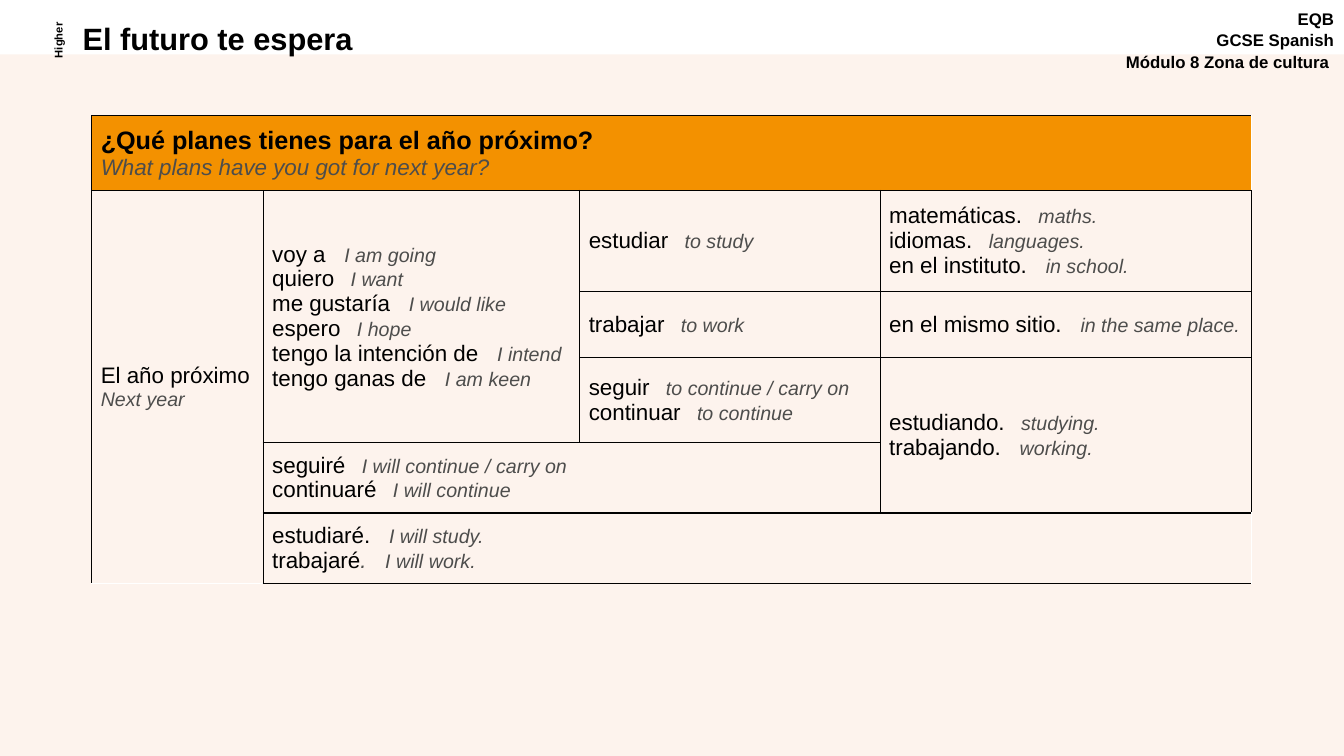
from lxml.etree import SubElement
from pptx import Presentation
from pptx.dml.color import RGBColor
from pptx.enum.shapes import MSO_SHAPE
from pptx.enum.text import MSO_ANCHOR, PP_ALIGN
from pptx.oxml.ns import qn
from pptx.util import Inches, Pt

BLACK, GREY, ORANGE, CREAM = "000000", "4D4D4C", "F39100", "FDF3ED"
SPANISH, ENGLISH = 16, 14
SPACE_WIDTH = 0.278  # of the type size


def color(value):
    return RGBColor.from_string(value)


class VocabularySlide:
    font = "Arial"
    thin, heavy = 0.75, 1

    def __init__(self, prs):
        self.slide = prs.slides.add_slide(prs.slide_layouts[5])
        self.shapes = self.slide.shapes

    def run(self, p, text, size, fill=BLACK, bold=False, italic=False):
        r = p.add_run()
        r.text = text
        r.font.name, r.font.size = self.font, Pt(size)
        r.font.bold, r.font.italic = bold, italic
        r.font.color.rgb = color(fill)
        return r

    def gap(self, p, size):
        """Add one space that is tracked out to the width of three."""
        r = self.run(p, " ", size)
        r.font._element.set("spc", str(round(200 * SPACE_WIDTH * size)))

    def background(self, x, y, w, h, fill):
        sp = self.shapes.add_shape(MSO_SHAPE.RECTANGLE, *map(Inches, (x, y, w, h)))
        sp.shadow.inherit = False
        sp.fill.solid()
        sp.fill.fore_color.rgb = color(fill)
        sp.line.fill.background()
        self.shapes._spTree.insert(2, sp._element)

    def title(self, x, y, w, h, text, size):
        sp = self.shapes.title
        sp.left, sp.top, sp.width, sp.height = map(Inches, (x, y, w, h))
        tf = sp.text_frame
        tf.vertical_anchor = MSO_ANCHOR.MIDDLE
        p = tf.paragraphs[0]
        p.alignment, p.line_spacing, p.space_before = PP_ALIGN.LEFT, 0.9, Pt(0)
        self.run(p, text, size, bold=True)

    def label(self, x, y, w, h, lines, size, align, rotation=0, spacing=1.0):
        sp = self.shapes.add_textbox(*map(Inches, (x, y, w, h)))
        sp.rotation = rotation
        tf = sp.text_frame
        tf.word_wrap = True
        for i, line in enumerate(lines):
            p = tf.add_paragraph() if i else tf.paragraphs[0]
            p.alignment, p.line_spacing = align, spacing
            self.run(p, line, size, bold=True)

    def table(self, x, y, cols, rows):
        frame = self.shapes.add_table(len(rows), len(cols), Inches(x), Inches(y),
                                      Inches(sum(cols)), Inches(sum(rows)))
        tbl = frame.table
        tbl.first_row = tbl.horz_banding = False
        for column, width in zip(tbl.columns, cols):
            column.width = Inches(width)
        for row, height in zip(tbl.rows, rows):
            row.height = Inches(height)
        return tbl

    def border(self, cell, side, width):
        ln = SubElement(cell._tc.get_or_add_tcPr(), qn(f"a:ln{side}"), w=str(Pt(width)))
        fill = SubElement(ln, qn("a:solidFill"))
        SubElement(fill, qn("a:srgbClr"), val=BLACK)

    def cell(self, tbl, row, col, height=1, width=1, fill=None, heavy=""):
        """Merge, outline and fill a block of cells; return its text frame."""
        bottom, right = row + height - 1, col + width - 1
        first = tbl.cell(row, col)
        if height * width > 1:
            first.merge(tbl.cell(bottom, right))
        for i in range(row, bottom + 1):
            for j in range(col, right + 1):
                part = tbl.cell(i, j)
                outer = {"L": j == col, "R": j == right, "T": i == row, "B": i == bottom}
                for side, is_outer in outer.items():
                    if is_outer:
                        self.border(part, side, self.heavy if side in heavy else self.thin)
                if fill:
                    part.fill.solid()
                    part.fill.fore_color.rgb = color(fill)
                else:
                    part.fill.background()
        first.vertical_anchor = MSO_ANCHOR.MIDDLE
        first.margin_left = first.margin_right = Inches(0.09)
        first.margin_top = first.margin_bottom = Inches(0.04)
        return first.text_frame

    def stacked(self, tf, spanish, english, sizes, bold=False):
        """Write the Spanish phrase with its translation on the next line."""
        self.run(tf.paragraphs[0], spanish, sizes[0], bold=bold)
        self.run(tf.add_paragraph(), english, sizes[1], GREY, italic=True)

    def phrases(self, tf, pairs):
        """Write one phrase a line, each followed by its translation."""
        for i, (spanish, english, gap_size) in enumerate(pairs):
            p = tf.add_paragraph() if i else tf.paragraphs[0]
            word, grey_stop, _ = spanish.partition("|")
            self.run(p, word, SPANISH)
            if grey_stop:
                self.run(p, ".", SPANISH, GREY, italic=True)
            self.gap(p, gap_size)
            self.run(p, english, ENGLISH, GREY, italic=True)


# Row, column, rows spanned, columns spanned, heavy sides, phrases with gap size.
# A bar at the end of a phrase stands for a grey full stop.
PHRASE_CELLS = [
    (1, 1, 3, 1, "TB", [
        ("voy a", "I am going", 16), ("quiero", "I want", 14),
        ("me gustaría", "I would like", 16), ("espero", "I hope", 14),
        ("tengo la intención de", "I intend", 16), ("tengo ganas de", "I am keen", 16)]),
    (1, 2, 1, 1, "T", [("estudiar", "to study", 14)]),
    (1, 3, 1, 1, "T", [
        ("matemáticas.", "maths.", 14), ("idiomas.", "languages.", 14),
        ("en el instituto.", "in school.", 16)]),
    (2, 2, 1, 1, "", [("trabajar", "to work", 14)]),
    (2, 3, 1, 1, "", [("en el mismo sitio.", "in the same place.", 16)]),
    (3, 2, 1, 1, "L", [
        ("seguir", "to continue / carry on", 14), ("continuar", "to continue", 14)]),
    (3, 3, 2, 1, "", [("estudiando.", "studying.", 14), ("trabajando.", "working.", 16)]),
    (4, 1, 1, 2, "LTB", [
        ("seguiré", "I will continue / carry on", 14), ("continuaré", "I will continue", 14)]),
    (5, 1, 1, 3, "LTB", [
        ("estudiaré.", "I will study.", 16), ("trabajaré|", "I will work.", 16)]),
]


def main():
    prs = Presentation()
    prs.slide_width, prs.slide_height = Inches(13.33), Inches(7.5)
    s = VocabularySlide(prs)
    s.background(0, 0.54, 13.33, 6.96, CREAM)
    s.label(10.99, 0.02, 2.34, 0.77,
            ["EQB", "GCSE Spanish", "Módulo 8 Zona de cultura "], 12,
            PP_ALIGN.RIGHT, spacing=1.07)
    s.title(0.72, 0.19, 8.53, 0.43, "El futuro te espera", 22)
    s.label(0.18, 0.29, 0.78, 0.22, ["Higher"], 8, PP_ALIGN.CENTER, rotation=270)

    tbl = s.table(0.91, 1.15, [1.7, 3.14, 2.98, 3.68], [0.74, 1, 0.66, 0.84, 0.7, 0.7])
    s.stacked(s.cell(tbl, 0, 0, width=4, fill=ORANGE),
              "¿Qué planes tienes para el año próximo?",
              "What plans have you got for next year?", (18, 16), bold=True)
    s.stacked(s.cell(tbl, 1, 0, height=5), "El año próximo", "Next year",
              (SPANISH, ENGLISH))
    for row, col, height, width, heavy, pairs in PHRASE_CELLS:
        s.phrases(s.cell(tbl, row, col, height, width, heavy=heavy), pairs)
    prs.save("out.pptx")


if __name__ == "__main__":
    main()
